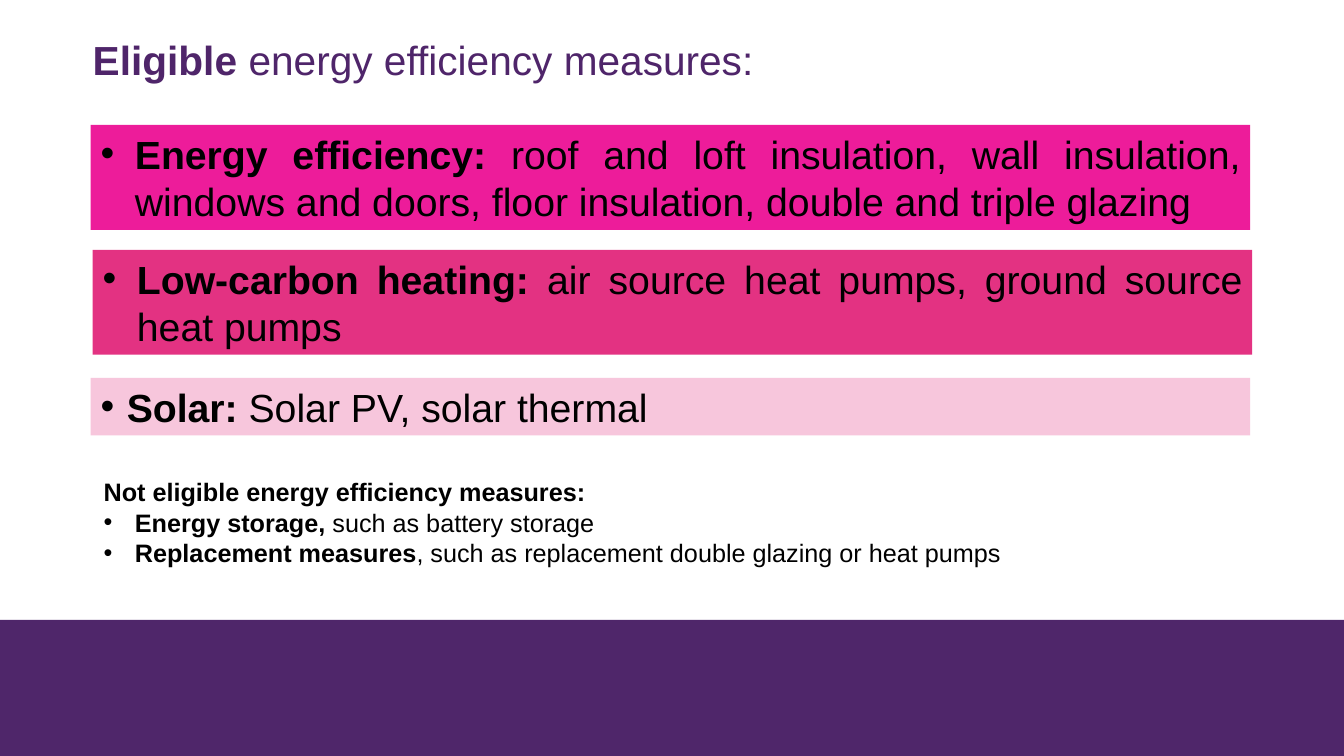
from pptx import Presentation
from pptx.util import Inches as In, Pt
from pptx.dml.color import RGBColor as Rgb
from pptx.enum.shapes import MSO_SHAPE as Kind
from pptx.enum.text import PP_ALIGN as Align, MSO_ANCHOR as Anchor, MSO_AUTO_SIZE as Auto
from lxml.etree import SubElement
from pptx.oxml.ns import qn

HUES = {
    "title": "4F256A",
    "foot": "4F266A",
    "text": "000000",
    "pink": "ED1C9A",
    "rose": "E33282",
    "pale": "F7C6DC",
}


class Deck:
    font = "Arial"

    def __init__(self, wide, high):
        self.prs = Presentation()
        self.prs.slide_width, self.prs.slide_height = In(wide), In(high)
        self.slide = self.prs.slides.add_slide(self.prs.slide_layouts[6])

    def style(self, item, form):
        for name, value in form.items():
            setattr(item, name, value)

    def bullet(self, para, hang):
        props = para._p.get_or_add_pPr()
        props.set("marL", str(In(hang)))
        props.set("indent", str(-In(hang)))
        SubElement(props, qn("a:buFont")).set("typeface", self.font)
        SubElement(props, qn("a:buChar")).set("char", "•")

    def fill(self, shape, lines, size, hue="text", hang=0, form={}, frame={}):
        box = shape.text_frame
        self.style(box, {"word_wrap": True, "vertical_anchor": Anchor.TOP, **frame})
        for num, (bold, plain, dot) in enumerate(lines):
            para = box.paragraphs[0] if num == 0 else box.add_paragraph()
            self.style(para, {"alignment": Align.LEFT, **form})
            if dot:
                self.bullet(para, hang)
            for words, heavy in ((bold, True), (plain, False)):
                if words:
                    run = para.add_run()
                    run.text = words
                    self.style(run.font, {"name": self.font, "size": Pt(size), "bold": heavy})
                    run.font.color.rgb = Rgb.from_string(HUES[hue])

    def block(self, area, hue):
        shape = self.slide.shapes.add_shape(Kind.RECTANGLE, *map(In, area))
        shape.shadow.inherit = False
        shape.fill.solid()
        shape.fill.fore_color.rgb = Rgb.from_string(HUES[hue])
        shape.line.fill.background()
        return shape

    def label(self, area, lines, size, **rest):
        self.fill(self.slide.shapes.add_textbox(*map(In, area)), lines, size, **rest)

    def band(self, area, hue, line, hang, align):
        form = {"alignment": align, "space_after": Pt(6)}
        self.fill(self.block(area, hue), [line], 28, hang=hang, form=form,
                  frame={"auto_size": Auto.SHAPE_TO_FIT_TEXT})


def main():
    deck = Deck(13.33, 7.5)
    deck.block((0, 6.15, 13.33, 1.35), "foot")
    sides = ("margin_left", "margin_top", "margin_right", "margin_bottom")
    deck.label((0.92, 0.4, 11.5, 0.55), [("Eligible", " energy efficiency measures:", False)],
               29, hue="title", form={"line_spacing": 0.9}, frame=dict.fromkeys(sides, 0))

    bands = [
        (0.9, 1.24, 1.04, "pink", "Energy efficiency: ",
         "roof and loft insulation, wall insulation, windows and doors, "
         "floor insulation, double and triple glazing", 0.34, Align.JUSTIFY),
        (0.92, 2.48, 1.04, "rose", "Low-carbon heating:",
         " air source heat pumps, ground source heat pumps", 0.34, Align.JUSTIFY),
        (0.9, 3.75, 0.57, "pale", "Solar:", " Solar PV, solar thermal", 0.26, Align.LEFT),
    ]
    for left, top, high, hue, bold, plain, hang, align in bands:
        deck.band((left, top, 11.5, high), hue, (bold, plain, True), hang, align)

    notes = [
        ("Not eligible energy efficiency measures:", "", False),
        ("Energy storage, ", "such as battery storage", True),
        ("Replacement measures", ", such as replacement double glazing or heat pumps", True),
    ]
    deck.label((0.93, 4.68, 11.48, 1.01), notes, 18, hang=0.31,
               frame={"auto_size": Auto.SHAPE_TO_FIT_TEXT})
    deck.prs.save("out.pptx")


if __name__ == "__main__":
    main()
